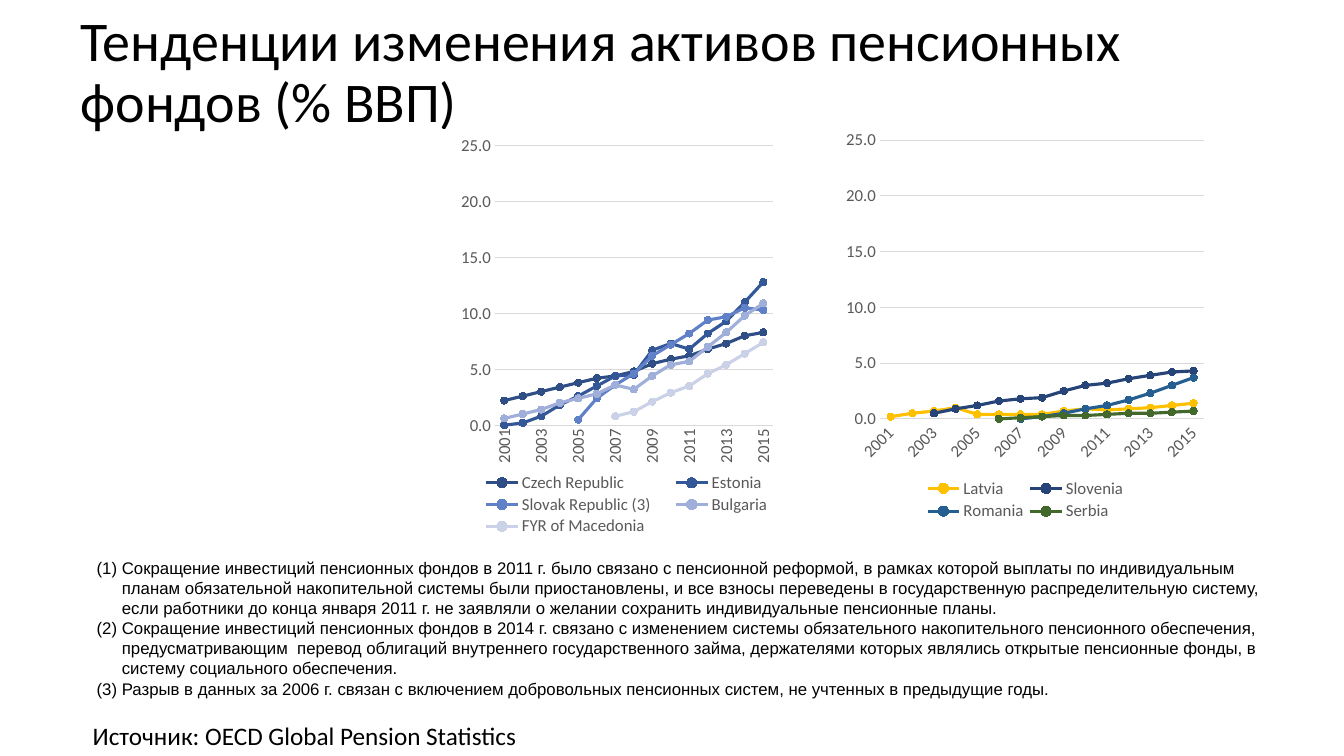
import pptx
import pptx.util
import pptx.chart.data
import pptx.dml.color
import pptx.enum.chart
import pptx.enum.text
import pptx.oxml
import pptx.oxml.ns

RGBColor = pptx.dml.color.RGBColor
Inches = pptx.util.Inches
Pt = pptx.util.Pt
qn = pptx.oxml.ns.qn

BLACK = RGBColor(0x00, 0x00, 0x00)
GREY = RGBColor(0x59, 0x59, 0x59)
GRID = RGBColor(0xD9, 0xD9, 0xD9)
NAVY = RGBColor(0x2F, 0x4E, 0x86)
BLUE = RGBColor(0x34, 0x58, 0x97)
SKY = RGBColor(0x60, 0x81, 0xC8)
PALE = RGBColor(0xA0, 0xAF, 0xD9)
MIST = RGBColor(0xCB, 0xD2, 0xE8)
GOLD = RGBColor(0xFF, 0xC0, 0x00)
INDIGO = RGBColor(0x26, 0x44, 0x78)
TEAL = RGBColor(0x25, 0x5E, 0x91)
GREEN = RGBColor(0x43, 0x68, 0x2B)

CHART_NS = 'xmlns:c="http://schemas.openxmlformats.org/drawingml/2006/chart"'
DRAW_NS = 'xmlns:a="http://schemas.openxmlformats.org/drawingml/2006/main"'

YEARS = [str(year) for year in range(2001, 2016)]
LARGER_FUNDS = [
    ("Czech Republic", NAVY,
     [2.2, 2.6, 3, 3.4, 3.8, 4.2, 4.4, 4.8, 5.5, 5.9, 6.2, 6.8, 7.3, 8, 8.3]),
    ("Estonia", BLUE,
     [0, 0.2, 0.8, 1.8, 2.6, 3.5, 4.4, 4.5, 6.7, 7.3, 6.8, 8.2, 9.3, 11, 12.8]),
    ("Slovak Republic (3)", SKY,
     [0.5, 2.4, 3.6, 4.6, 6.2, 7.2, 8.2, 9.4, 9.7, 10.5, 10.3]),
    ("Bulgaria", PALE,
     [0.6, 1, 1.4, 2, 2.4, 2.8, 3.6, 3.2, 4.4, 5.4, 5.7, 7, 8.3, 9.8, 10.9]),
    ("FYR of Macedonia", MIST, [0.8, 1.2, 2.1, 2.9, 3.5, 4.6, 5.4, 6.4, 7.4]),
]
SMALLER_FUNDS = [
    ("Latvia", GOLD,
     [0.2, 0.5, 0.7, 1, 0.4, 0.4, 0.4, 0.4, 0.7, 0.9, 0.8, 0.9, 1, 1.2, 1.4]),
    ("Slovenia", INDIGO,
     [0.5, 0.9, 1.2, 1.6, 1.8, 1.9, 2.5, 3, 3.2, 3.6, 3.9, 4.2, 4.3]),
    ("Romania", TEAL, [0, 0.2, 0.5, 0.9, 1.2, 1.7, 2.3, 3, 3.7]),
    ("Serbia", GREEN, [0, 0.1, 0.2, 0.3, 0.3, 0.4, 0.5, 0.5, 0.6, 0.7]),
]
NOTES = [
    "Сокращение инвестиций пенсионных фондов в 2011 г. было связано с пенсионной реформой, "
    "в рамках которой выплаты по индивидуальным планам обязательной накопительной системы "
    "были приостановлены, и все взносы переведены в государственную распределительную систему, "
    "если работники до конца января 2011 г. не заявляли о желании сохранить индивидуальные "
    "пенсионные планы.",
    "Сокращение инвестиций пенсионных фондов в 2014 г. связано с изменением системы "
    "обязательного накопительного пенсионного обеспечения, предусматривающим  перевод "
    "облигаций внутреннего государственного займа, держателями которых являлись открытые "
    "пенсионные фонды, в систему социального обеспечения.",
    "(3) Разрыв в данных за 2006 г. связан с включением добровольных пенсионных систем, "
    "не учтенных в предыдущие годы.",
]


def style_font(font, size, color=BLACK, name="Calibri"):
    """Set size, colour and typeface of a font."""
    font.size = Pt(size)
    font.name = name
    font.color.rgb = color


def add_title(page, box, text):
    """Place the slide title in its placeholder."""
    title = page.shapes.title
    title.left, title.top, title.width, title.height = map(Inches, box)
    frame = title.text_frame
    frame.text = text
    frame.word_wrap = True
    frame.vertical_anchor = pptx.enum.text.MSO_ANCHOR.MIDDLE
    para = frame.paragraphs[0]
    para.alignment = pptx.enum.text.PP_ALIGN.LEFT
    para.line_spacing = 0.9
    style_font(para.runs[0].font, 40)


def set_layout(part, index, shares, target=""):
    """Fix a chart part at shares of the chart's size."""
    for layout in part.findall(qn("c:layout")):
        part.remove(layout)
    modes = '<c:xMode val="edge"/><c:yMode val="edge"/>'
    sides = "".join(f'<c:{key} val="{share}"/>' for key, share in zip("xywh", shares))
    part.insert(index, pptx.oxml.parse_xml(
        f"<c:layout {CHART_NS}><c:manualLayout>{target}{modes}{sides}"
        "</c:manualLayout></c:layout>"))


def arrange_chart(chart, plot, legend, turn):
    """Place plot and legend on white, with slanted alternate years."""
    root = chart.element
    area = root.find(".//" + qn("c:plotArea"))
    set_layout(area, 0, plot, '<c:layoutTarget val="inner"/>')
    set_layout(root.find(".//" + qn("c:legend")), 1, legend)
    root.find(qn("c:chart")).addnext(pptx.oxml.parse_xml(
        f'<c:spPr {CHART_NS} {DRAW_NS}><a:solidFill><a:srgbClr val="FFFFFF"/></a:solidFill>'
        "<a:ln><a:noFill/></a:ln></c:spPr>"))
    years = area.find(qn("c:catAx"))
    years.find(qn("c:noMultiLvlLbl")).addprevious(
        pptx.oxml.parse_xml(f'<c:tickLblSkip {CHART_NS} val="2"/>'))
    body = years.find(qn("c:txPr")).find(qn("a:bodyPr"))
    body.set("rot", str(turn * 60000))
    body.set("vert", "horz")


def add_trend_chart(page, box, funds, plot, legend, turn):
    """Draw one line chart of fund assets by year."""
    data = pptx.chart.data.CategoryChartData(number_format="#,##0.0")
    data.categories = YEARS
    for name, color, values in funds:
        data.add_series(name, [None] * (len(YEARS) - len(values)) + values)
    chart = page.shapes.add_chart(
        pptx.enum.chart.XL_CHART_TYPE.LINE_MARKERS, *map(Inches, box), data).chart
    style_font(chart.font, 12)
    chart.has_title = False
    chart.has_legend = True
    chart.legend.position = pptx.enum.chart.XL_LEGEND_POSITION.BOTTOM
    chart.legend.include_in_layout = False
    style_font(chart.legend.font, 12, GREY)

    for axis in (chart.category_axis, chart.value_axis):
        axis.major_tick_mark = axis.minor_tick_mark = pptx.enum.chart.XL_TICK_MARK.NONE
        style_font(axis.tick_labels.font, 12, GREY)
    scale = chart.value_axis
    scale.minimum_scale, scale.maximum_scale, scale.major_unit = 0, 25, 5
    scale.tick_labels.number_format = "#,##0.0"
    scale.tick_labels.number_format_is_linked = False
    scale.format.line.fill.background()
    for line in (chart.category_axis.format.line, scale.major_gridlines.format.line):
        line.color.rgb = GRID
        line.width = Pt(0.75)

    for series, (name, color, values) in zip(chart.plots[0].series, funds):
        series.smooth = False
        series.format.line.color.rgb = color
        series.format.line.width = Pt(2.25)
        marker = series.marker
        marker.style = pptx.enum.chart.XL_MARKER_STYLE.CIRCLE
        marker.size = 5
        marker.format.fill.solid()
        marker.format.fill.fore_color.rgb = color
        marker.format.line.color.rgb = color
    arrange_chart(chart, plot, legend, turn)


def add_notes(page, box, notes):
    """Write the footnotes, numbering all but the last automatically."""
    frame = page.shapes.add_textbox(*map(Inches, box)).text_frame
    frame.word_wrap = True
    frame.text = "\n".join(notes)
    for para in frame.paragraphs:
        style_font(para.runs[0].font, 12, name="Arial")
        numbered = para.text != notes[-1]
        props = para._p.get_or_add_pPr()
        props.set("marL", str(Inches(0.27 if numbered else 0.02)))
        props.set("indent", str(Inches(-0.25 if numbered else 0)))
        if numbered:
            props.append(pptx.oxml.parse_xml(f'<a:buFont {DRAW_NS} typeface="Arial"/>'))
            props.append(pptx.oxml.parse_xml(
                f'<a:buAutoNum {DRAW_NS} type="arabicParenBoth"/>'))


def add_source(page, box, text):
    """Write the source line at the foot of the slide."""
    frame = page.shapes.add_textbox(*map(Inches, box)).text_frame
    frame.word_wrap = False
    frame.text = text
    style_font(frame.paragraphs[0].runs[0].font, 18)


def main():
    """Build the slide and save it."""
    deck = pptx.Presentation()
    deck.slide_width, deck.slide_height = Inches(13.33), Inches(7.5)
    page = deck.slides.add_slide(deck.slide_layouts[5])
    add_title(page, (0.7, 0.01, 11.5, 1.45),
              "Тенденции изменения активов пенсионных фондов (% ВВП)")
    add_source(page, (0.82, 7.1, 4.45, 0.4), "Источник: OECD Global Pension Statistics")
    add_notes(page, (0.84, 5.48, 11.89, 1.51), NOTES)
    add_trend_chart(page, (4.38, 1.28, 3.53, 4.14), LARGER_FUNDS,
                    (0.15, 0.04, 0.78, 0.67), (0.07, 0.82, 0.9, 0.16), -90)
    add_trend_chart(page, (8.32, 1.23, 3.7, 4.01), SMALLER_FUNDS,
                    (0.11, 0.04, 0.87, 0.69), (0.22, 0.87, 0.56, 0.12), -45)
    deck.save("out.pptx")


if __name__ == "__main__":
    main()
